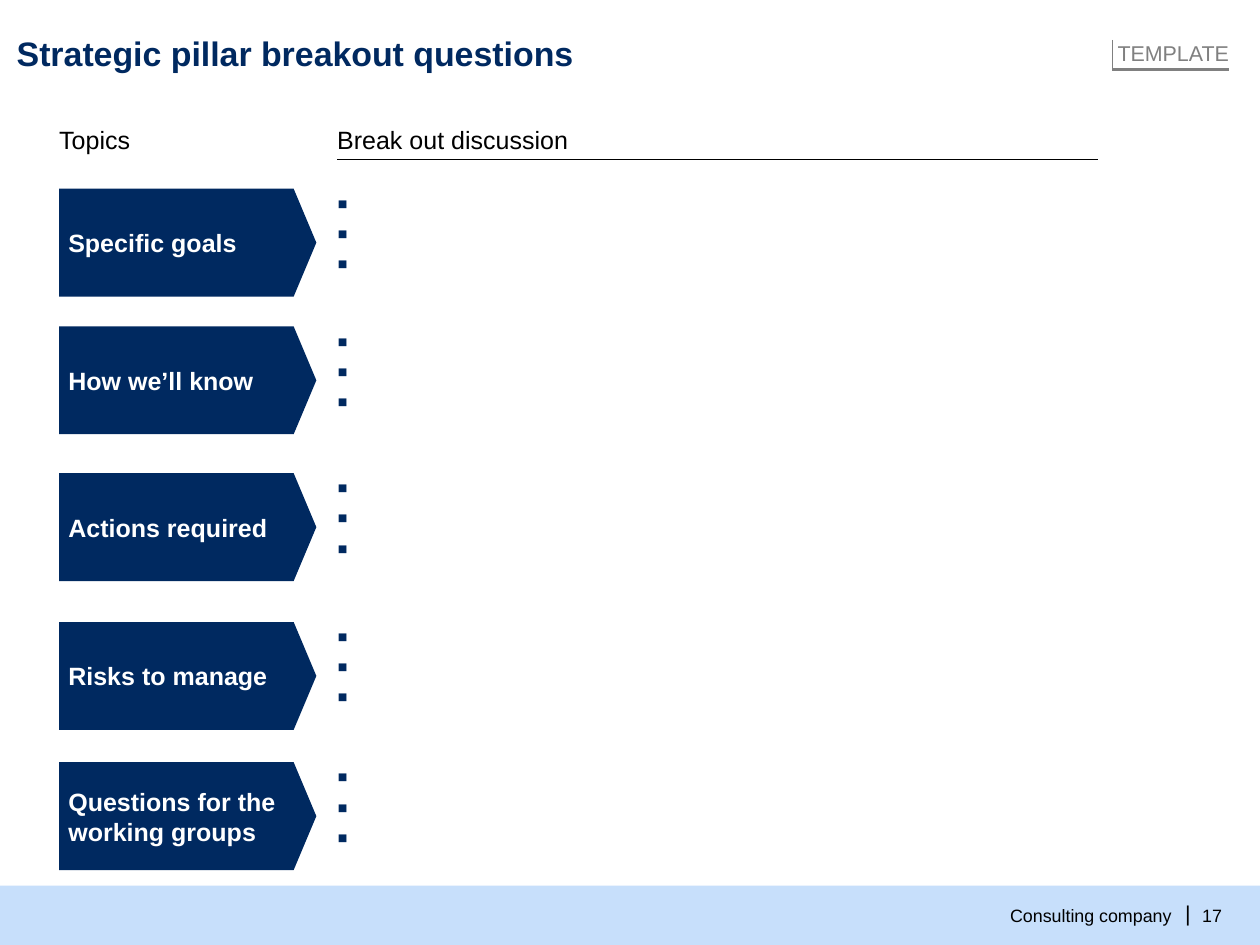
from lxml.etree import SubElement
from pptx import Presentation
from pptx.dml.color import RGBColor
from pptx.enum.shapes import MSO_CONNECTOR as Connector, MSO_SHAPE as Shape
from pptx.enum.text import MSO_ANCHOR as Anchor, PP_ALIGN as Align
from pptx.oxml.ns import qn
from pptx.util import Cm, Pt

NAVY, BLACK, WHITE, GRAY, PALE = "002960", "000000", "FFFFFF", "808080", "C7DFFB"


def rgb(value):
    return RGBColor.from_string(value)


def write(box, lines, size, color, bold=False, align=Align.LEFT, anchor=Anchor.TOP, wrap=True, left=0):
    frame = box.text_frame
    frame.word_wrap = wrap
    frame.vertical_anchor = anchor
    frame.margin_left = Cm(left)
    frame.margin_top = frame.margin_right = frame.margin_bottom = 0
    for index, line in enumerate(lines):
        para = frame.add_paragraph() if index else frame.paragraphs[0]
        para.alignment = align
        span = para.add_run()
        span.text = line
        span.font.name = "Arial"
        span.font.size = Pt(size)
        span.font.bold = bold
        span.font.color.rgb = rgb(color)


deck = Presentation()
deck.slide_width, deck.slide_height = Cm(24.89), Cm(18.67)
page = deck.slides.add_slide(deck.slide_layouts[5])
shapes = page.shapes

title = shapes.title
title.left, title.top, title.width, title.height = Cm(0.33), Cm(0.64), Cm(23.95), Cm(0.81)
write(title, ["Strategic pillar breakout questions"], 19, NAVY, bold=True)

footer = shapes.add_shape(Shape.RECTANGLE, 0, Cm(17.5), deck.slide_width, Cm(1.17))
footer.shadow.inherit = False
footer.fill.solid()
footer.fill.fore_color.rgb = rgb(PALE)
footer.line.fill.background()

for text, left, top, width, height, size, align in [
    ("Consulting company", 19.69, 17.88, 3.45, 0.43, 10, Align.RIGHT),
    ("|", 23.39, 17.78, 0.13, 0.51, 12, Align.RIGHT),
    ("17", 23.75, 17.88, 0.58, 0.43, 10, Align.LEFT),
]:
    box = shapes.add_textbox(Cm(left), Cm(top), Cm(width), Cm(height))
    write(box, [text], size, BLACK, align=align, anchor=Anchor.MIDDLE, wrap=False)

for heading, left in [("Topics", 1.17), ("Break out discussion", 6.66)]:
    box = shapes.add_textbox(Cm(left), Cm(2.46), Cm(5.08), Cm(0.61))
    write(box, [heading], 14, BLACK)

tag = shapes.add_textbox(Cm(21.97), Cm(0.79), Cm(2.31), Cm(0.5))
write(tag, ["TEMPLATE"], 12, GRAY, align=Align.RIGHT, wrap=False)

for x1, y1, x2, y2, color, weight in [
    (6.66, 3.15, 21.69, 3.15, BLACK, 0.75),
    (21.97, 0.79, 21.97, 1.37, GRAY, 0.75),
    (21.97, 1.37, 24.28, 1.37, GRAY, 2),
]:
    rule = shapes.add_connector(Connector.STRAIGHT, Cm(x1), Cm(y1), Cm(x2), Cm(y2))
    rule.line.color.rgb = rgb(color)
    rule.line.width = Pt(weight)
    SubElement(rule._element.spPr, qn("a:effectLst"))

for topic, top in [
    ("Specific goals", 3.73),
    ("How we’ll know", 6.45),
    ("Actions required", 9.35),
    ("Risks to manage", 12.29),
    ("Questions for the working groups", 15.06),
]:
    arrow = shapes.add_shape(Shape.PENTAGON, Cm(1.17), Cm(top), Cm(5.08), Cm(2.13))
    arrow.adjustments[0] = 0.21
    arrow.shadow.inherit = False
    arrow.fill.solid()
    arrow.fill.fore_color.rgb = rgb(NAVY)
    arrow.line.fill.background()
    write(arrow, [topic], 14, WHITE, bold=True, anchor=Anchor.MIDDLE, left=0.18)

    answers = shapes.add_textbox(Cm(6.66), Cm(top), Cm(15.04), Cm(1.8))
    write(answers, ["…"] * 3, 14, WHITE)
    for para in answers.text_frame.paragraphs:
        props = para._p.get_or_add_pPr()
        props.set("marL", str(Cm(0.53)))
        props.set("indent", str(-Cm(0.53)))
        SubElement(SubElement(props, qn("a:buClr")), qn("a:srgbClr"), val=NAVY)
        SubElement(props, qn("a:buSzPct"), val="125000")
        SubElement(props, qn("a:buFont"), typeface="Arial")
        SubElement(props, qn("a:buChar"), char="▪")

deck.save("out.pptx")
